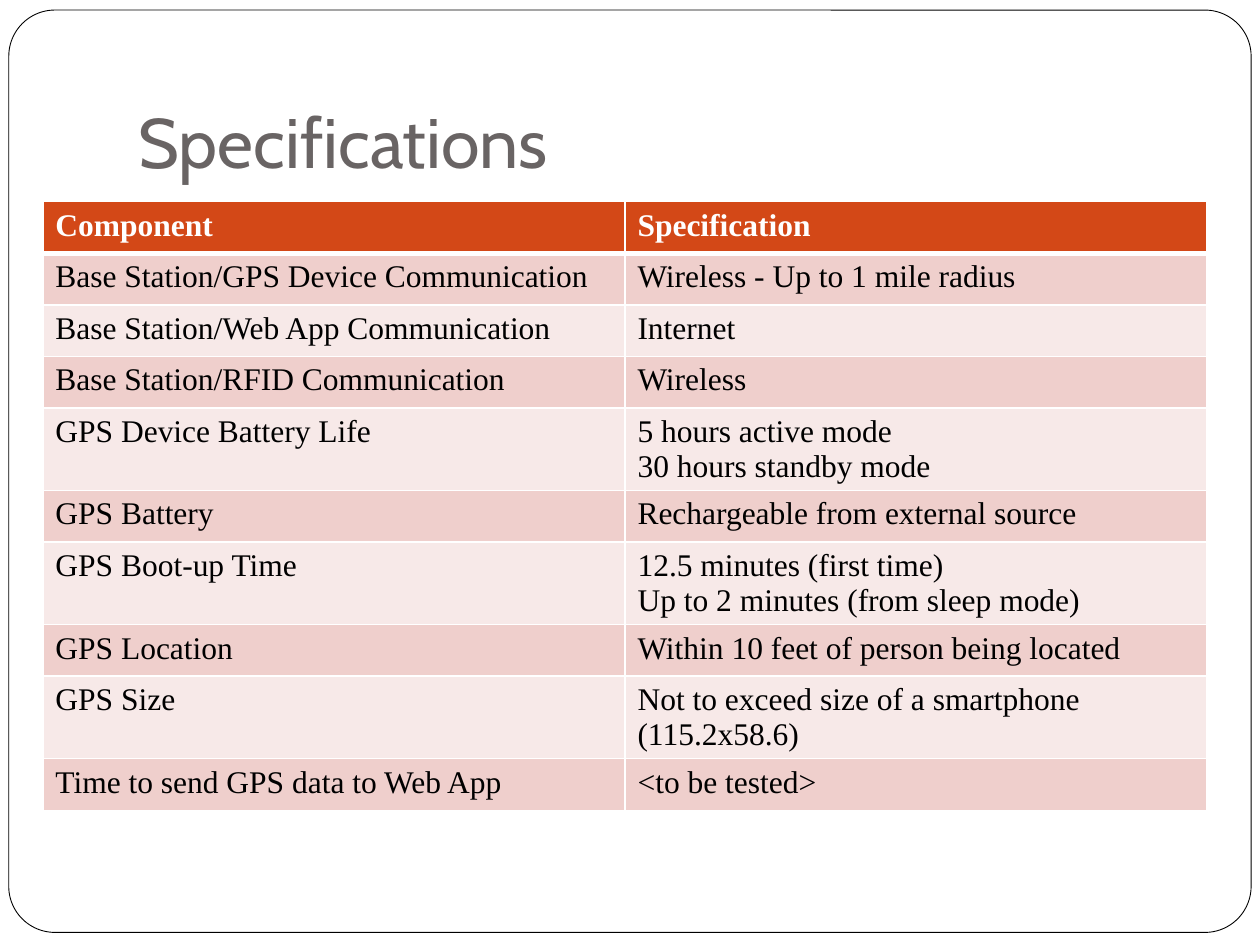
from lxml import etree
from pptx import Presentation
from pptx import util as u
from pptx.dml.color import RGBColor
from pptx.enum import shapes, text
from pptx.oxml import ns

WIDTH, HEIGHT = u.Inches(10), u.Inches(7.5)

WHITE = RGBColor(0xFF, 0xFF, 0xFF)
BLACK = RGBColor(0, 0, 0)
GRAY = RGBColor(0x69, 0x64, 0x64)
ORANGE = RGBColor(0xD3, 0x48, 0x17)
BANDS = [RGBColor(0xF7, 0xE9, 0xE8), RGBColor(0xEF, 0xCF, 0xCC)]

TITLE_FONT = {"name": "Cabin", "size": u.Pt(40)}
HEADER_FONT = {"name": "Times New Roman", "size": u.Pt(18), "bold": True}
BODY_FONT = {**HEADER_FONT, "bold": False}

LINE_HEIGHTS = {1: 0.41, 2: 0.65}  # row height in inches by lines of text

# Component, specification, lines of text in the row
SPECS = [
    ("Component", "Specification", 1),
    ("Base Station/GPS Device Communication", "Wireless - Up to 1 mile radius", 1),
    ("Base Station/Web App Communication", "Internet", 1),
    ("Base Station/RFID Communication", "Wireless", 1),
    ("GPS Device Battery Life", "5 hours active mode\n30 hours standby mode", 2),
    ("GPS Battery", "Rechargeable from external source", 1),
    ("GPS Boot-up Time",
     "12.5 minutes (first time)\nUp to 2 minutes (from sleep mode)", 2),
    ("GPS Location", "Within 10 feet of person being located", 1),
    ("GPS Size", "Not to exceed size of a smartphone (115.2x58.6)", 2),
    ("Time to send GPS data to Web App", "<to be tested>", 1),
]


def set_attrs(obj, values):
    for name, value in values.items():
        setattr(obj, name, value)


def format_text(tf, font, color):
    for p in tf.paragraphs:
        p.alignment = text.PP_ALIGN.LEFT
        for r in p.runs:
            set_attrs(r.font, font)
            r.font.color.rgb = color


def add_frame(s):
    sp = s.shapes.add_shape(
        shapes.MSO_SHAPE.ROUNDED_RECTANGLE,
        u.Inches(0.07), u.Inches(0.08), u.Inches(9.86), u.Inches(7.32))
    sp.adjustments[0] = 0.05
    sp.shadow.inherit = False
    sp.fill.solid()
    sp.fill.fore_color.rgb = WHITE
    sp.line.color.rgb = BLACK
    sp.line.width = u.Pt(0.5)
    # Behind the title
    s.shapes._spTree.insert(2, sp._element)


def add_title(s, wording):
    title = s.shapes.title
    set_attrs(title, {"left": int(WIDTH * 0.1), "top": int(HEIGHT * 0.04),
                      "width": int(WIDTH * 0.85), "height": u.Inches(1.25)})
    tf = title.text_frame
    tf.text = wording
    set_attrs(tf, {"vertical_anchor": text.MSO_ANCHOR.BOTTOM,
                   "auto_size": text.MSO_AUTO_SIZE.NONE, "word_wrap": True,
                   "margin_bottom": u.Inches(0.1)})
    format_text(tf, TITLE_FONT, GRAY)


def add_borders(cell, widths):
    tc_pr = cell._tc.get_or_add_tcPr()
    for side, width in widths.items():
        ln = etree.SubElement(tc_pr, ns.qn(f"a:ln{side}"), w=str(u.Pt(width)))
        fill = etree.SubElement(ln, ns.qn("a:solidFill"))
        etree.SubElement(fill, ns.qn("a:srgbClr"), val=str(WHITE))


def fill_cell(cell, wording, row):
    header = row == 0
    add_borders(cell, {"L": 1, "R": 1, "T": 3 if row == 1 else 1,
                       "B": 3 if header else 1})
    cell.fill.solid()
    cell.fill.fore_color.rgb = ORANGE if header else BANDS[row % 2]
    cell.text_frame.text = wording
    format_text(cell.text_frame, HEADER_FONT if header else BODY_FONT,
                WHITE if header else BLACK)


def add_spec_table(s, specs):
    heights = [u.Inches(LINE_HEIGHTS[lines]) for *_, lines in specs]
    table = s.shapes.add_table(
        len(specs), 2, u.Inches(0.34), u.Inches(1.6),
        u.Inches(9.24), sum(heights)).table
    for i, (component, spec, _) in enumerate(specs):
        table.rows[i].height = heights[i]
        for j, wording in enumerate((component, spec)):
            fill_cell(table.cell(i, j), wording, i)


def main():
    prs = Presentation()
    set_attrs(prs, {"slide_width": WIDTH, "slide_height": HEIGHT})
    s = prs.slides.add_slide(prs.slide_layouts[5])
    add_frame(s)
    add_title(s, "Specifications")
    add_spec_table(s, SPECS)
    prs.save("out.pptx")


if __name__ == "__main__":
    main()
